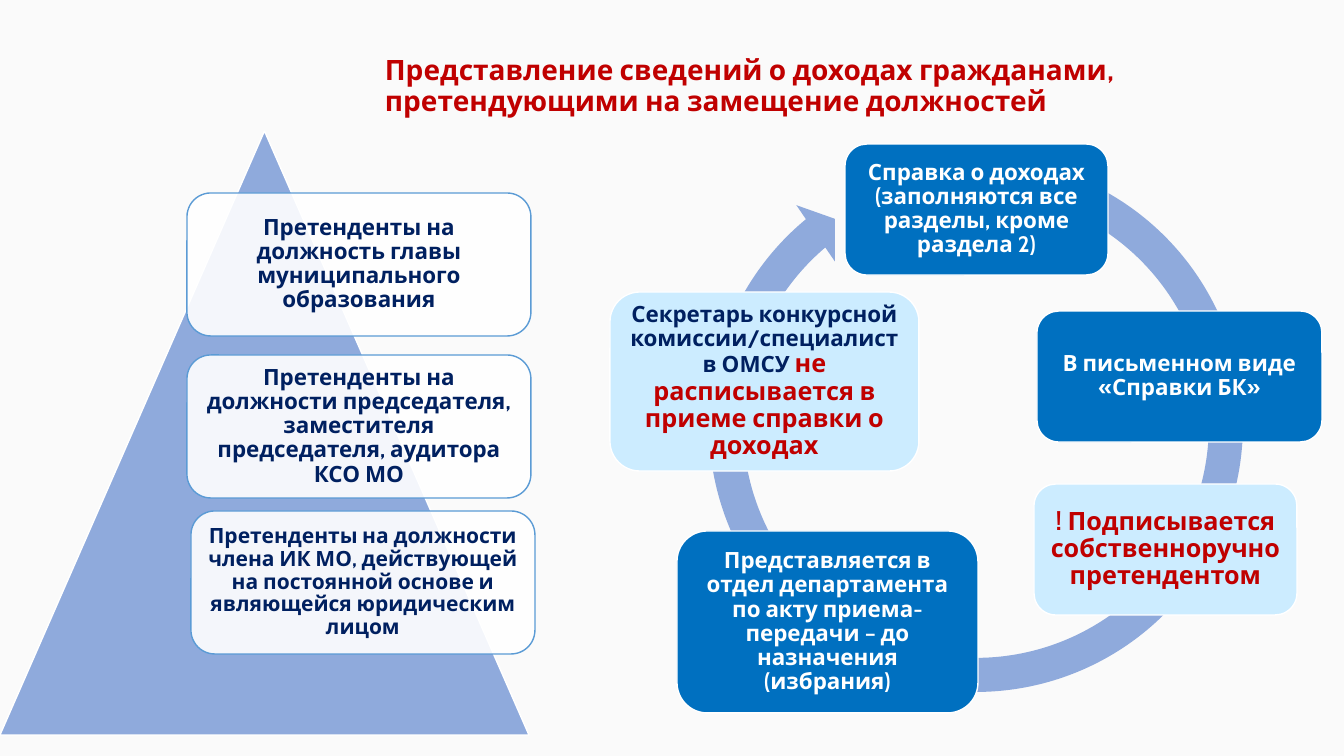
import pptx
import pptx.util
import pptx.dml.color
import pptx.enum.shapes
import pptx.enum.text
import pptx.oxml.ns
from lxml import etree

PX = 914400 / 100.8
FONT = "Cabin"
COLORS = {
    "background": "FAFAFA", "white": "FFFFFF", "red": "C00000", "navy": "002060",
    "blue": "0070C0", "pale": "CCECFF", "periwinkle": "8FAADC", "outline": "5B9BD5",
}

# Runs are (text, size in points, colour); "\n" is a line break.
TITLE = [("Представление сведений о доходах гражданами, "
          "претендующими на замещение должностей", 20, "red")]
TITLE_BOX = (375, 14, 922, 146)
PYRAMID_BOX = (0, 131, 529, 604)
CYCLE_BOX = (692, 141, 568, 568)
CYCLE_ADJUSTMENTS = (0.06, 3.31, 138.05, 173.68, 0.06)

CARD_SIZE = (344, 143)
CARDS = [
    ((187, 193), [("Претенденты на должность главы муниципального образования", 16, "navy")]),
    ((187, 355), [("Претенденты на должности председателя, заместителя "
                   "председателя, аудитора\nКСО МО", 16, "navy")]),
    ((191, 511), [("Претенденты на должности члена ИК МО, действующей на "
                   "постоянной основе и являющейся юридическим лицом", 15, "navy")]),
]
STEPS = [
    ((845, 144, 263, 131), "blue",
     [("Справка о доходах (заполняются все разделы, кроме раздела 2)", 16, "white")]),
    ((1037, 311, 285, 131), "blue", [("В письменном виде «Справки БК»", 16, "white")]),
    ((1034, 484, 263, 131), "pale",
     [("! Подписывается собственноручно претендентом", 18, "red")]),
    ((677, 531, 301, 182), "blue",
     [("Представляется в отдел департамента по акту приема-передачи – "
       "до назначения (избрания)", 16, "white")]),
    ((610, 292, 309, 179), "pale",
     [("Секретарь конкурсной комиссии/специалист в ОМСУ ", 16, "navy"),
      ("не расписывается в приеме справки о доходах", 18, "red")]),
]


def emu(box):
    return [pptx.util.Emu(round(v * PX)) for v in box]


def rgb(name):
    return pptx.dml.color.RGBColor.from_string(COLORS[name])


def write(sp, runs, align, inset=None):
    tf = sp.text_frame
    tf.word_wrap = True
    tf.vertical_anchor = pptx.enum.text.MSO_ANCHOR.MIDDLE
    if inset is not None:
        (margin,) = emu([inset])
        tf.margin_left = tf.margin_right = tf.margin_top = tf.margin_bottom = margin
    p = tf.paragraphs[0]
    p.alignment = align
    p.line_spacing = 0.9
    for text, size, color in runs:
        for i, line in enumerate(text.split("\n")):
            if i:
                p.add_line_break()
            r = p.add_run()
            r.text = line
            r.font.name = FONT
            r.font.size = pptx.util.Pt(size)
            r.font.bold = True
            r.font.color.rgb = rgb(color)


def add_shape(s, kind, box, fill, line=None):
    sp = s.shapes.add_shape(kind, *emu(box))
    sp.shadow.inherit = False
    sp.fill.solid()
    sp.fill.fore_color.rgb = rgb(fill)
    if line:
        sp.line.color.rgb = rgb(line)
        sp.line.width = pptx.util.Pt(1)
    else:
        sp.line.fill.background()
    return sp


def set_alpha(sp, percent):
    """Set the opacity of a solid fill."""
    qn = pptx.oxml.ns.qn
    color = sp.element.spPr.find(qn("a:solidFill")).find(qn("a:srgbClr"))
    etree.SubElement(color, qn("a:alpha")).set("val", str(percent * 1000))


def main():
    prs = pptx.Presentation()
    prs.slide_width, prs.slide_height = emu((1344, 756))
    s = prs.slides.add_slide(prs.slide_layouts[6])
    s.background.fill.solid()
    s.background.fill.fore_color.rgb = rgb("background")
    shape = pptx.enum.shapes.MSO_SHAPE
    align = pptx.enum.text.PP_ALIGN

    write(s.shapes.add_textbox(*emu(TITLE_BOX)), TITLE, align.LEFT)

    add_shape(s, shape.ISOSCELES_TRIANGLE, PYRAMID_BOX, "periwinkle", "white")
    for corner, runs in CARDS:
        card = add_shape(s, shape.ROUNDED_RECTANGLE, corner + CARD_SIZE, "white", "outline")
        set_alpha(card, 90)
        write(card, runs, align.CENTER, 7)

    cycle = add_shape(s, shape.CIRCULAR_ARROW, CYCLE_BOX, "periwinkle")
    for i, value in enumerate(CYCLE_ADJUSTMENTS):
        cycle.adjustments[i] = value
    for box, fill, runs in STEPS:
        step = add_shape(s, shape.ROUNDED_RECTANGLE, box, fill, "white")
        write(step, runs, align.CENTER, 7)

    prs.save("out.pptx")


if __name__ == "__main__":
    main()
